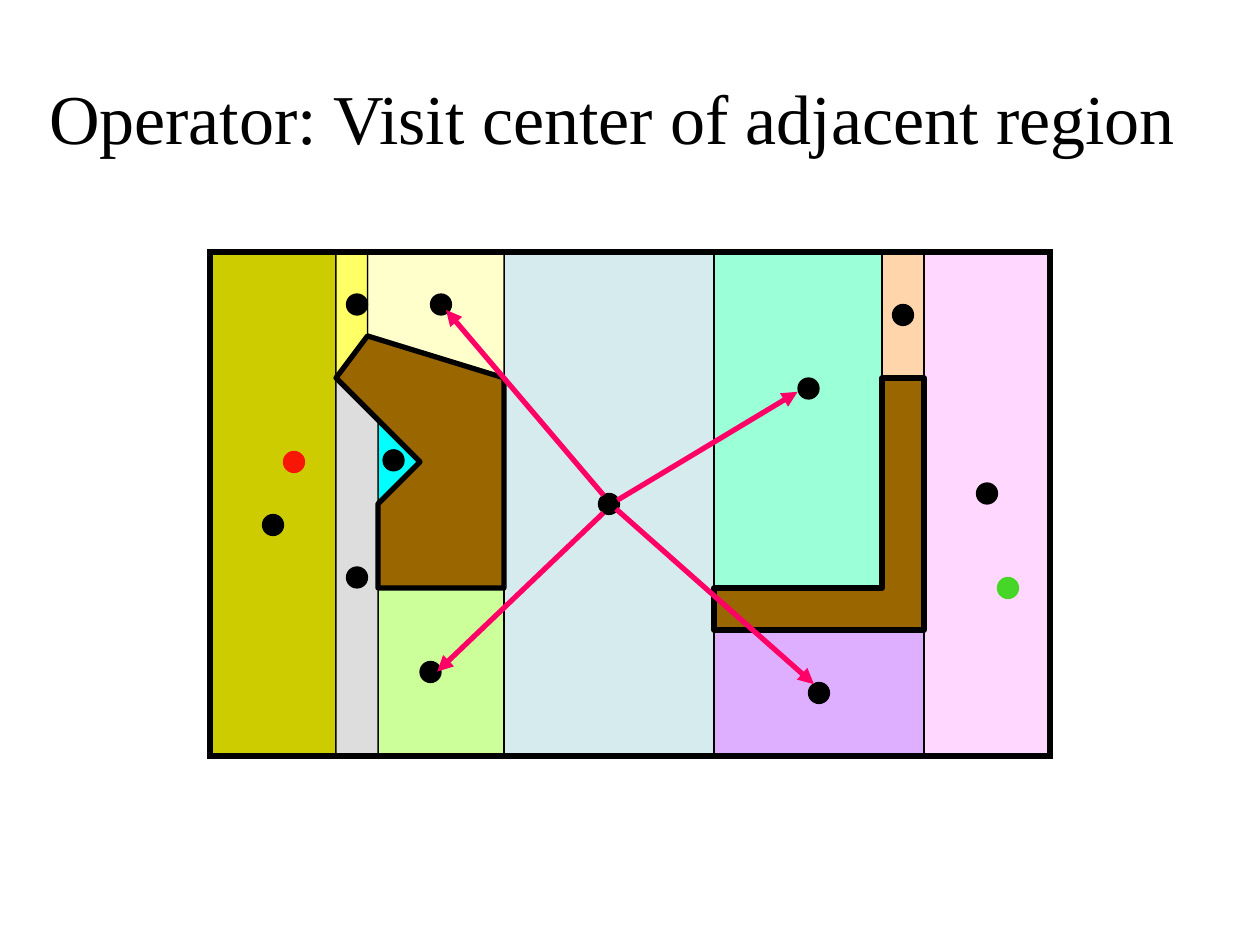
from lxml import etree
from pptx import Presentation
from pptx.dml.color import RGBColor
from pptx.enum.shapes import MSO_CONNECTOR, MSO_SHAPE
from pptx.enum.text import MSO_ANCHOR, PP_ALIGN
from pptx.oxml.ns import qn
from pptx.util import Inches, Pt

RECT, OVAL = MSO_SHAPE.RECTANGLE, MSO_SHAPE.OVAL
STRAIGHT = MSO_CONNECTOR.STRAIGHT

# Content: the map is a grid of 20 by 12 cells, each a third of an inch
TITLE = "Operator: Visit center of adjacent region"
CELL, LEFT, TOP = 1 / 3, 5 / 3, 2
COLS, ROWS = 20, 12
DOT = 1 / 6
THIN, THICK = 0.75, 3
BLACK, BROWN, PINK = "000000", "996600", "FF0066"

# Rectangular regions: left, top, right, bottom, colour
ROOMS = [
    (12, 0, 16, 8, "9BFFD7"),
    (16, 0, 17, 3, "FFD5AB"),
    (12, 9, 17, 12, "DFAFFF"),
    (17, 0, 20, 12, "FFD7FF"),
    (7, 0, 12, 12, "D5EBED"),
    (4, 8, 7, 12, "CCFF99"),
    (0, 0, 3, 12, "CCCC00"),
]
# Other regions: corners, colour
PARTS = [
    ([(3.75, 0), (3.75, 2), (7, 3), (7, 0)], "FFFFCC"),
    ([(4, 4), (5, 5), (4, 6)], "00FFFF"),
    ([(3, 3), (4, 4), (4, 12), (3, 12)], "DDDDDD"),
    ([(3.75, 2), (3, 3), (3, 0), (3.75, 0)], "FFFF66"),
]
WALLS = [
    [(3, 3), (5, 5), (4, 6), (4, 8), (7, 8), (7, 3), (3.75, 2)],
    [(12, 8), (12, 9), (17, 9), (17, 3), (16, 3), (16, 8)],
]
# Dot centers
START, GOAL = (2, 5), (19, 8)
CENTERS = [
    (9.5, 6), (14.25, 3.25), (16.5, 1.5), (5.25, 10), (14.5, 10.5),
    (3.5, 7.75), (3.5, 1.25), (5.5, 1.25), (4.37, 4.96),
    (1.5, 6.5), (18.5, 5.75),
]
# Arrows in inches on the slide: from, to
MOVES = [
    ((4.79, 4.07), (3.47, 5.33)),
    ((4.79, 3.93), (3.54, 2.46)),
    ((4.9, 3.97), (6.33, 3.11)),
    ((4.89, 4.04), (6.46, 5.43)),
]


def rgb(code):
    return RGBColor.from_string(code)


def place(x, y):
    return Inches(LEFT + x * CELL), Inches(TOP + y * CELL)


def paint(shape, fill, line=BLACK, width=THIN):
    shape.shadow.inherit = False
    if fill:
        shape.fill.solid()
        shape.fill.fore_color.rgb = rgb(fill)
    else:
        shape.fill.background()
    shape.line.color.rgb = rgb(line)
    shape.line.width = Pt(width)
    return shape


def add_box(x1, y1, x2, y2, fill, width=THIN):
    size = [Inches(n * CELL) for n in (x2 - x1, y2 - y1)]
    box = shapes.add_shape(RECT, *place(x1, y1), *size)
    return paint(box, fill, width=width)


def add_area(points, fill, width=THIN):
    first, *rest = [place(*p) for p in points]
    path = shapes.build_freeform(*first)
    path.add_line_segments(rest, close=True)
    paint(path.convert_to_shape(), fill, width=width)


def add_dot(center, color):
    x, y = place(*center)
    size = Inches(DOT)
    dot = shapes.add_shape(OVAL, x - size // 2, y - size // 2, size, size)
    paint(dot, color, color)


def add_arrow(start, end):
    arrow = shapes.add_connector(STRAIGHT, *map(Inches, start + end))
    arrow.line.color.rgb = rgb(PINK)
    arrow.line.width = Pt(THICK)
    tip = etree.SubElement(arrow.line._get_or_add_ln(), qn("a:tailEnd"))
    tip.set("type", "triangle")
    etree.SubElement(arrow._element.spPr, qn("a:effectLst"))


deck = Presentation()
deck.slide_width, deck.slide_height = Inches(10), Inches(7.5)
slide = deck.slides.add_slide(deck.slide_layouts[5])
shapes = slide.shapes

# Title, set a little left of the middle by its right margin
title = shapes.title
spot = {"left": 0, "top": 0.3, "width": 10, "height": 1.25}
for name, value in spot.items():
    setattr(title, name, Inches(value))
frame = title.text_frame
frame.text = TITLE
frame.margin_right = Inches(0.38)
frame.vertical_anchor = MSO_ANCHOR.MIDDLE
line = frame.paragraphs[0]
line.alignment = PP_ALIGN.CENTER
for name, value in {"name": "Times New Roman", "size": Pt(40)}.items():
    setattr(line.runs[0].font, name, value)
line.runs[0].font.color.rgb = rgb(BLACK)

# Regions
for room in ROOMS:
    add_box(*room)
for points, color in PARTS:
    add_area(points, color)

# Square-cornered border and the walls
border = add_box(0, 0, COLS, ROWS, None, THICK)
join = etree.SubElement(border.line._get_or_add_ln(), qn("a:miter"))
join.set("lim", "800000")
for points in WALLS:
    add_area(points, BROWN, THICK)

# Dots and arrows
add_dot(START, "F81706")
add_dot(GOAL, "45D628")
for center in CENTERS:
    add_dot(center, BLACK)
for start, end in MOVES:
    add_arrow(start, end)

deck.save("out.pptx")
